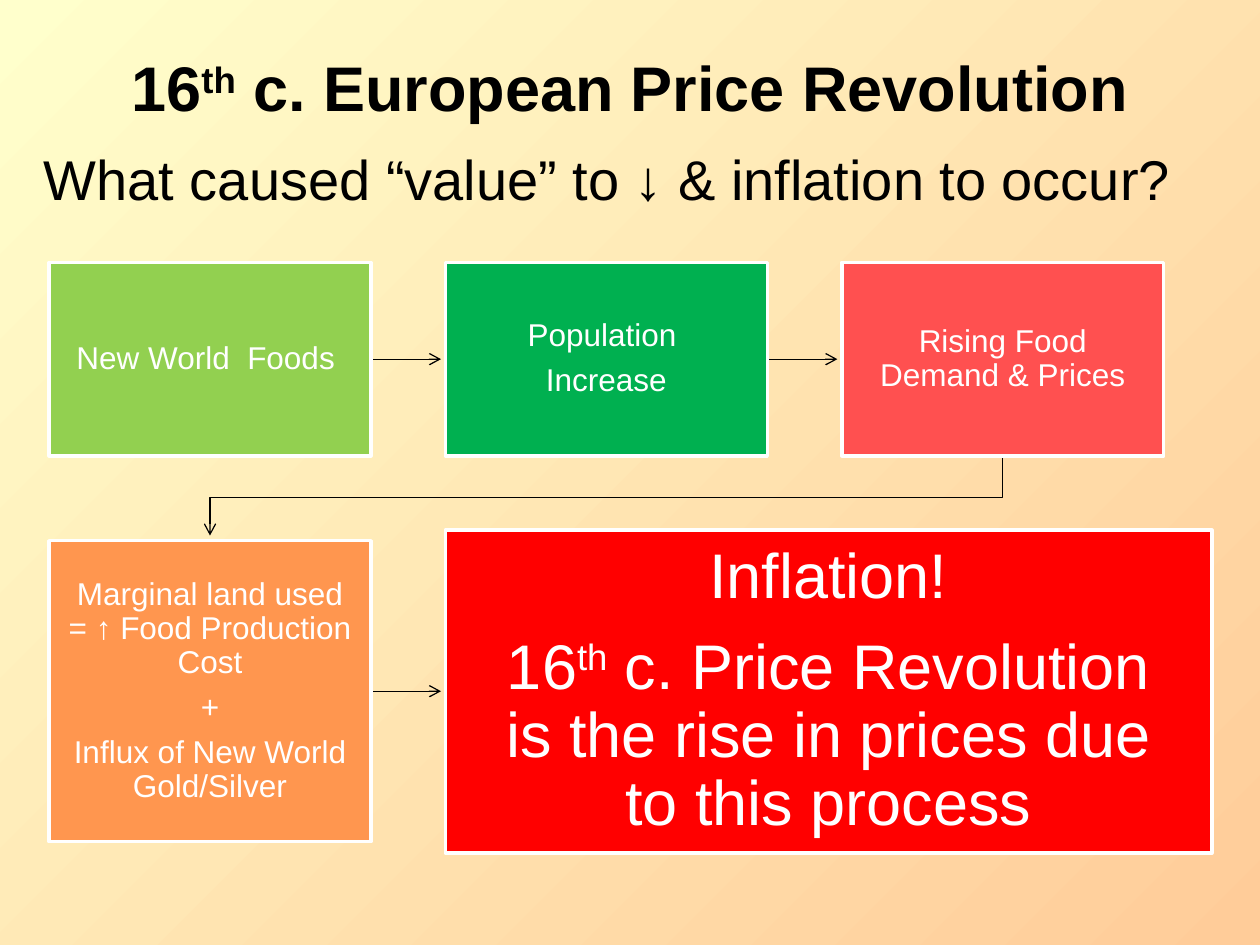
from lxml import etree
from pptx import Presentation
from pptx import util as u
from pptx.dml import color
from pptx.enum import shapes, text
from pptx.oxml import ns

Pt = u.Pt
FONT = "Arial"
COLORS = {
    "cream": "FFFFCC", "peach": "FFCC99", "black": "000000", "white": "FFFFFF",
    "lime": "92D050", "green": "00B050", "coral": "FF5050",
    "orange": "FF964F", "red": "FF0000",
}

# Flow chart grid, in points
LEFT, TOP, BOX_W, BOX_H, PITCH = 28, 150, 184, 110.5, 226.5
COLUMNS = [LEFT + i * PITCH for i in range(3)]
ROW2, ROW2_H = 309, 172
ARROW_GAP = 40


def rgb(name):
    return color.RGBColor.from_string(COLORS[name])


def write(tf, paragraphs, size, ink, align, bold=False, spacing=None, after=0):
    """Fill a text frame; text between ^ marks is superscript."""
    tf.word_wrap = True
    tf.vertical_anchor = text.MSO_ANCHOR.MIDDLE
    for i, line in enumerate(paragraphs):
        p = tf.add_paragraph() if i else tf.paragraphs[0]
        p.alignment = align
        p.line_spacing = spacing
        p.space_after = Pt(after)
        for j, part in enumerate(line.split("^")):
            r = p.add_run()
            r.text = part
            r.font.name, r.font.size, r.font.bold = FONT, Pt(size), bold
            r.font.color.rgb = rgb(ink)
            if j % 2:
                r.font._element.set("baseline", "30000")


def add_text(s, x, y, w, h, line, size, align, bold=False):
    tb = s.shapes.add_textbox(Pt(x), Pt(y), Pt(w), Pt(h))
    write(tb.text_frame, [line], size, "black", align, bold)


def add_box(s, x, y, w, h, fill, paragraphs, size=18, inset=10):
    sp = s.shapes.add_shape(shapes.MSO_SHAPE.RECTANGLE, Pt(x), Pt(y), Pt(w), Pt(h))
    sp.shadow.inherit = False
    sp.fill.solid()
    sp.fill.fore_color.rgb = rgb(fill)
    sp.line.color.rgb = rgb("white")
    sp.line.width = Pt(2)
    tf = sp.text_frame
    tf.margin_left = tf.margin_right = tf.margin_top = tf.margin_bottom = Pt(inset)
    write(tf, paragraphs, size, "white", text.PP_ALIGN.CENTER,
          spacing=0.9, after=size * 0.35)


def style_arrow(sp):
    sp.line.color.rgb = rgb("black")
    sp.line.width = Pt(0.75)
    etree.SubElement(sp.line._get_or_add_ln(), ns.qn("a:tailEnd"), type="arrow")


def add_arrow(s, x, y):
    c = s.shapes.add_connector(shapes.MSO_CONNECTOR.STRAIGHT,
                               Pt(x), Pt(y), Pt(x + ARROW_GAP), Pt(y))
    style_arrow(c)
    etree.SubElement(c._element.spPr, ns.qn("a:effectLst"))


def add_bent_arrow(s, points):
    points = [(Pt(x), Pt(y)) for x, y in points]
    builder = s.shapes.build_freeform(*points[0])
    builder.add_line_segments(points[1:], close=False)
    sp = builder.convert_to_shape()
    sp.shadow.inherit = False
    sp.fill.background()
    style_arrow(sp)


def set_background(s):
    fill = s.background.fill
    fill.gradient()
    fill.gradient_angle = 315
    for stop, name in zip(fill.gradient_stops, ("cream", "peach")):
        stop.color.rgb = rgb(name)


def main():
    prs = Presentation()
    prs.slide_width, prs.slide_height = Pt(720), Pt(540)
    s = prs.slides.add_slide(prs.slide_layouts[6])
    set_background(s)

    # Title and question
    add_text(s, 36, 21.6, 648, 56, "16^th^ c. European Price Revolution", 36,
             text.PP_ALIGN.CENTER, bold=True)
    add_text(s, 18, 78, 684, 48, "What caused “value” to ↓ & inflation to occur?",
             32, text.PP_ALIGN.LEFT)

    # Arrows between the steps
    for x in COLUMNS[:2]:
        add_arrow(s, x + BOX_W, TOP + BOX_H / 2)
    add_arrow(s, LEFT + BOX_W, ROW2 + ROW2_H / 2)
    start, end = COLUMNS[2] + BOX_W / 2, LEFT + BOX_W / 2
    add_bent_arrow(s, [(start, TOP + BOX_H), (start, 284.5),
                       (end, 284.5), (end, ROW2 - 3)])

    # First row of steps
    steps = [
        ("lime", ["New World  Foods "]),
        ("green", ["Population ", "Increase"]),
        ("coral", ["Rising Food Demand & Prices"]),
    ]
    for x, (fill, paragraphs) in zip(COLUMNS, steps):
        add_box(s, x, TOP, BOX_W, BOX_H, fill, paragraphs)

    # Second row: last cause and the result
    add_box(s, LEFT, ROW2, BOX_W, ROW2_H, "orange",
            ["Marginal land used = ↑ Food Production Cost", "+",
             "Influx of New World Gold/Silver"])
    add_box(s, COLUMNS[1], 303, 438, 184.5, "red",
            ["Inflation!",
             "16^th^ c. Price Revolution is the rise in prices due to this process"],
            size=36, inset=20)

    prs.save("out.pptx")


if __name__ == "__main__":
    main()
